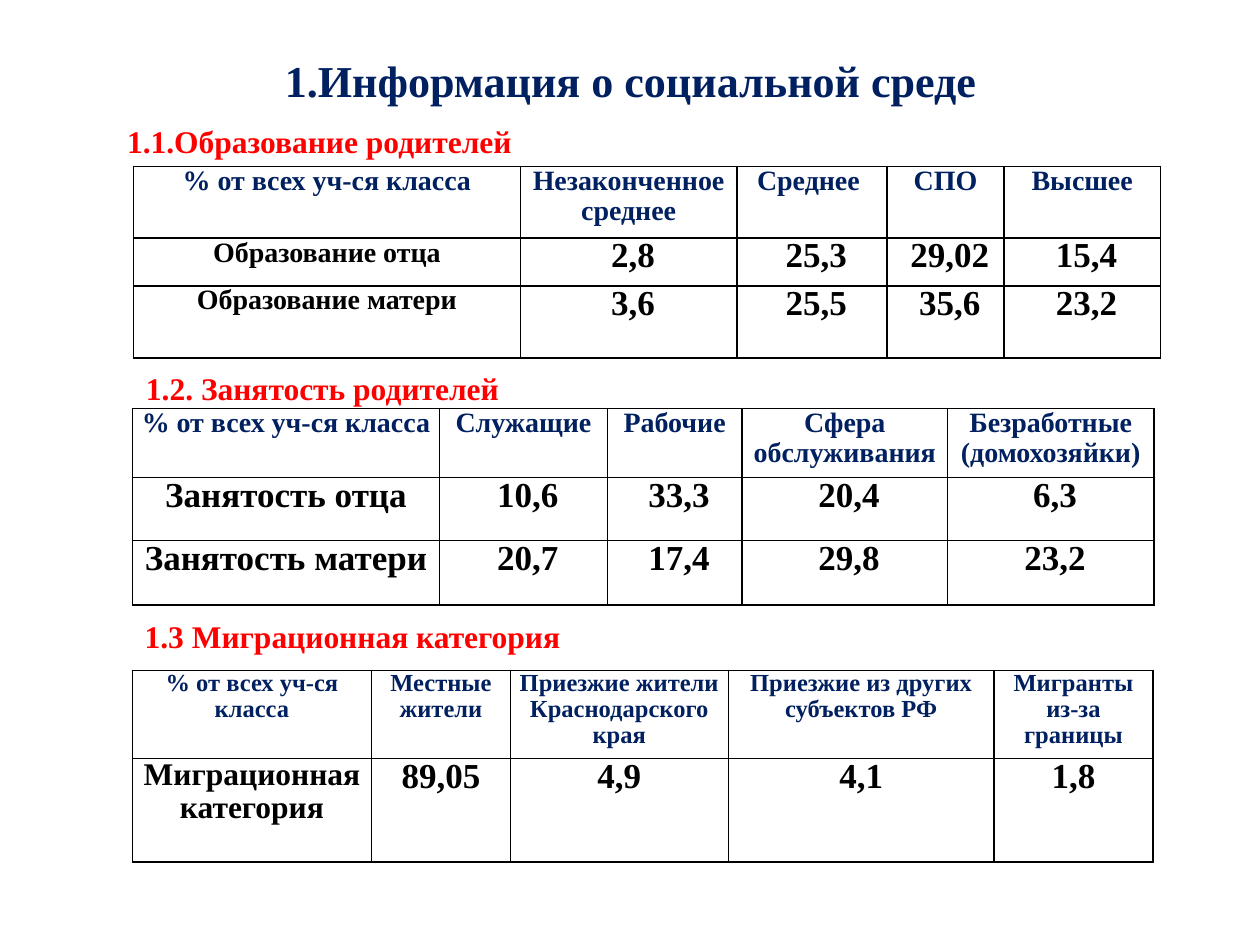
from dataclasses import dataclass

from lxml import etree
from pptx import Presentation
from pptx.dml.color import RGBColor
from pptx.enum.text import MSO_ANCHOR, PP_ALIGN
from pptx.oxml.ns import qn
from pptx.slide import Slide
from pptx.table import _Cell
from pptx.text.text import _Paragraph
from pptx.util import Inches, Pt

CENTER = PP_ALIGN.CENTER
LEFT = PP_ALIGN.LEFT
TOP = MSO_ANCHOR.TOP
TITLE_ONLY = 5

FONT = "Times New Roman"
COLORS = {"navy": "002060", "red": "FF0000", "black": "000000"}
SLIDE_WIDTH, SLIDE_HEIGHT = Inches(10), Inches(7.5)
COLUMN, ROW = SLIDE_WIDTH / 100, SLIDE_HEIGHT / 75
VALUE_SIZE = 20
CELL_LINE_SPACING = 0.96


@dataclass(frozen=True)
class Box:
    left: float
    top: float
    width: float
    height: float

    def place(self) -> tuple[int, int, int, int]:
        return (round(self.left * COLUMN), round(self.top * ROW),
                round(self.width * COLUMN), round(self.height * ROW))


@dataclass(frozen=True)
class Section:
    heading: str
    heading_box: Box
    left: float
    top: float
    columns: list[float]
    rows: list[float]
    header_size: int
    label_size: int
    cells: list[list[str]]


TITLE_BOX = Box(5.1, 3, 89.9, 10.1)
SECTIONS = [
    Section(
        "1.1.Образование родителей", Box(9.1, 9.2, 57.1, 4),
        10.6, 13.2, [30.7, 17.2, 11.9, 9.3, 12.4], [5.7, 3.8, 5.7], 16, 16,
        [["% от всех уч-ся класса", "Незаконченное среднее", "Среднее ", "СПО", "Высшее"],
         ["Образование отца", " 2,8", " 25,3", " 29,02", " 15,4"],
         ["Образование матери", " 3,6", " 25,5", " 35,6", " 23,2"]]),
    Section(
        "1.2. Занятость родителей", Box(10.6, 28.8, 77.2, 7.1),
        10.5, 32.4, [24.4, 13.3, 10.7, 16.3, 16.4], [5.5, 5, 5.1], 16, 20,
        [["% от всех уч-ся класса", "Служащие", "Рабочие", "Сфера обслуживания",
          "Безработные (домохозяйки)"],
         ["Занятость отца", " 10,6", " 33,3", " 20,4", " 6,3"],
         ["Занятость матери", " 20,7", " 17,4", " 29,8", " 23,2"]]),
    Section(
        "1.3 Миграционная категория", Box(10.5, 48.5, 50, 7.1),
        10.5, 53.2, [19, 11, 17.3, 21.1, 12.6], [7, 8.2], 14, 18,
        [["% от всех уч-ся класса", "Местные жители", "Приезжие жители Краснодарского края",
          "Приезжие из других субъектов РФ", "Мигранты из-за границы"],
         ["Миграционная категория", "89,05", "4,9", "4,1", "1,8"]]),
]


def add_text(paragraph: _Paragraph, text: str, size: float, color: str,
             alignment: PP_ALIGN) -> None:
    paragraph.alignment = alignment
    run = paragraph.add_run()
    run.text = text
    run.font.name = FONT
    run.font.size = Pt(size)
    run.font.bold = True
    run.font.color.rgb = RGBColor.from_string(COLORS[color])


def add_borders(cell: _Cell) -> None:
    properties = cell._tc.get_or_add_tcPr()
    for side in ("a:lnL", "a:lnR", "a:lnT", "a:lnB"):
        line = etree.SubElement(properties, qn(side), w=str(Pt(1)))
        fill = etree.SubElement(line, qn("a:solidFill"))
        etree.SubElement(fill, qn("a:srgbClr"), val=COLORS["black"])


def format_cell(cell: _Cell, text: str, size: int, color: str) -> None:
    cell.margin_left = cell.margin_right = Inches(0.07)
    cell.margin_top = cell.margin_bottom = 0
    cell.vertical_anchor = TOP
    add_borders(cell)
    cell.fill.background()
    paragraph = cell.text_frame.paragraphs[0]
    paragraph.line_spacing = CELL_LINE_SPACING
    add_text(paragraph, text, size, color, CENTER)


def add_heading(slide: Slide, section: Section) -> None:
    frame = slide.shapes.add_textbox(*section.heading_box.place()).text_frame
    frame.word_wrap = True
    add_text(frame.paragraphs[0], section.heading, 18, "red", LEFT)


def add_section_table(slide: Slide, section: Section) -> None:
    box = Box(section.left, section.top, sum(section.columns), sum(section.rows))
    table = slide.shapes.add_table(
        len(section.rows), len(section.columns), *box.place()).table
    table.first_row = table.horz_banding = False
    for column, width in zip(table.columns, section.columns):
        column.width = round(width * COLUMN)
    for row, height in zip(table.rows, section.rows):
        row.height = round(height * ROW)
    for row_index, texts in enumerate(section.cells):
        for column_index, text in enumerate(texts):
            if row_index == 0:
                size, color = section.header_size, "navy"
            else:
                size = section.label_size if column_index == 0 else VALUE_SIZE
                color = "black"
            format_cell(table.cell(row_index, column_index), text, size, color)


def add_title(slide: Slide) -> None:
    title = slide.shapes.title
    title.left, title.top, title.width, title.height = TITLE_BOX.place()
    frame = title.text_frame
    frame.vertical_anchor = TOP
    frame.margin_top = Inches(0.12)
    frame.word_wrap = True
    add_text(frame.paragraphs[0], "1.Информация о социальной среде", 25.2, "navy", CENTER)


def main() -> None:
    presentation = Presentation()
    presentation.slide_width, presentation.slide_height = SLIDE_WIDTH, SLIDE_HEIGHT
    slide = presentation.slides.add_slide(presentation.slide_layouts[TITLE_ONLY])
    add_title(slide)
    for section in SECTIONS:
        add_section_table(slide, section)
        add_heading(slide, section)
    presentation.save("out.pptx")


if __name__ == "__main__":
    main()
